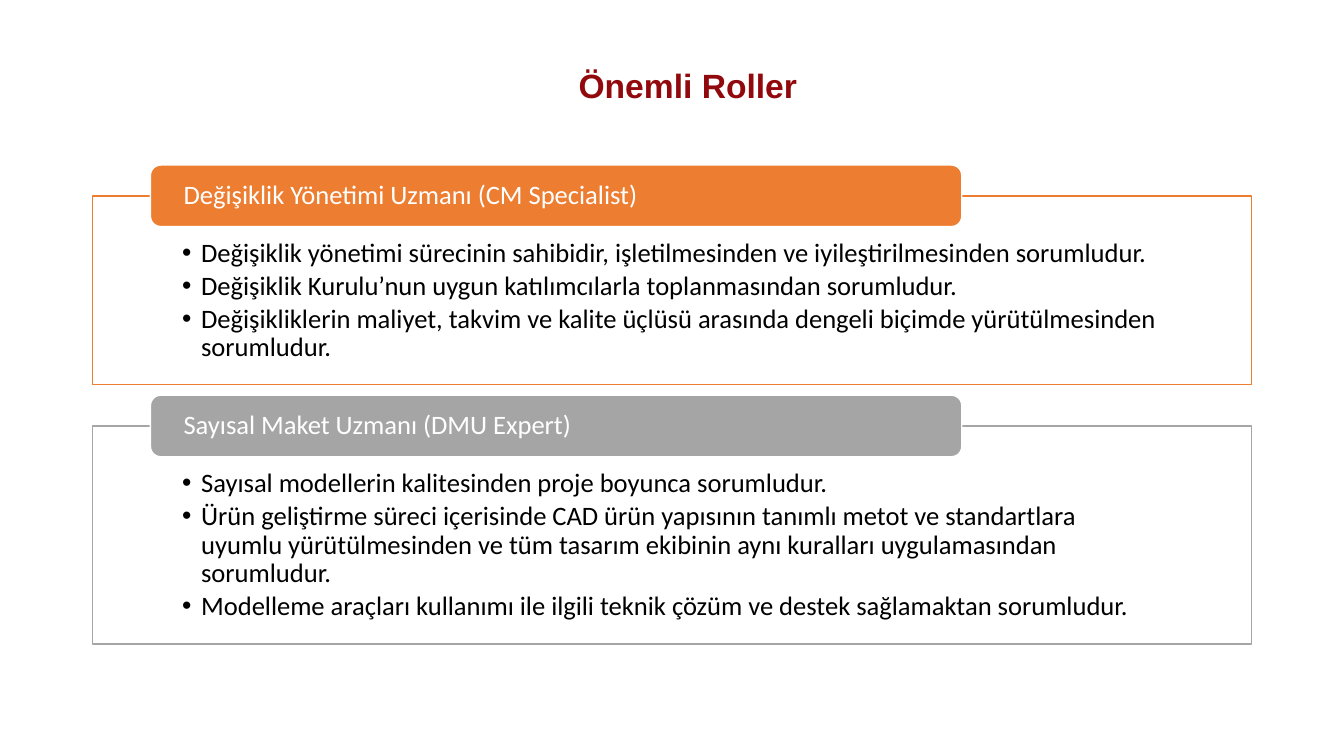
from pptx import Presentation
from pptx.dml.color import RGBColor
from pptx.enum.shapes import MSO_SHAPE as Kind
from pptx.enum.text import MSO_ANCHOR as Anchor, PP_ALIGN as Align
from pptx.oxml.ns import qn
from pptx.util import Cm, Pt
from lxml.etree import SubElement as Sub

ROLES = [
    ("Değişiklik Yönetimi Uzmanı (CM Specialist)", "ED7D31", 4.75, [
        "Değişiklik yönetimi sürecinin sahibidir, işletilmesinden ve iyileştirilmesinden sorumludur.",
        "Değişiklik Kurulu’nun uygun katılımcılarla toplanmasından sorumludur.",
        "Değişikliklerin maliyet, takvim ve kalite üçlüsü arasında dengeli biçimde yürütülmesinden sorumludur.",
    ]),
    ("Sayısal Maket Uzmanı (DMU Expert)", "A5A5A5", 5.49, [
        "Sayısal modellerin kalitesinden proje boyunca sorumludur.",
        "Ürün geliştirme süreci içerisinde CAD ürün yapısının tanımlı metot ve standartlara "
        "uyumlu yürütülmesinden ve tüm tasarım ekibinin aynı kuralları uygulamasından sorumludur.",
        "Modelleme araçları kullanımı ile ilgili teknik çözüm ve destek sağlamaktan sorumludur.",
    ]),
]
LEFT, TOP, WIDTH, GAP = 2.33, 4.94, 29.21, 1.05


def color(code):
    return RGBColor.from_string(code)


def add_bullet(para, indent=0.48):
    props = para._p.get_or_add_pPr()
    props.set("marL", str(Cm(indent)))
    props.set("indent", str(-Cm(indent)))
    Sub(props, qn("a:buFont")).set("typeface", "Arial")
    Sub(props, qn("a:buChar")).set("char", "•")


def write(shape, *lines, font="Calibri", size=19, ink="000000", bold=False,
          align=Align.LEFT, anchor=Anchor.MIDDLE, pad=(0, 0, 0, 0),
          bullet=False, gap=0):
    """Fill a shape with paragraphs; pad is left, top, right, bottom in cm."""
    frame = shape.text_frame
    frame.word_wrap = True
    frame.vertical_anchor = anchor
    (frame.margin_left, frame.margin_top,
     frame.margin_right, frame.margin_bottom) = map(Cm, pad)
    for i, line in enumerate(lines):
        para = frame.add_paragraph() if i else frame.paragraphs[0]
        if bullet:
            add_bullet(para)
        para.alignment = align
        para.line_spacing = 0.9
        if i:
            para.space_before = Pt(gap)
        run = para.add_run()
        run.text = line
        run.font.name, run.font.size, run.font.bold = font, Pt(size), bold
        run.font.color.rgb = color(ink)


def add_box(slide, kind, box, fill, edge, alpha=None):
    shape = slide.shapes.add_shape(kind, *map(Cm, box))
    shape.shadow.inherit = False
    shape.fill.solid()
    shape.fill.fore_color.rgb = color(fill)
    if alpha is not None:
        tint = shape.fill._xPr.find(qn("a:solidFill"))[0]
        Sub(tint, qn("a:alpha")).set("val", str(alpha * 1000))
    shape.line.color.rgb = color(edge)
    shape.line.width = Pt(1)
    return shape


def add_title(slide, text, box):
    title = slide.shapes.add_textbox(*map(Cm, box))
    write(title, text, font="Arial", size=24, ink="91090C", bold=True,
          align=Align.CENTER)


def add_role(slide, name, hue, duties, box):
    """Outlined panel of duties with a colored tab across its top edge."""
    left, top, width, _ = box
    panel = add_box(slide, Kind.RECTANGLE, box, "FFFFFF", hue, alpha=90)
    write(panel, *duties, anchor=Anchor.TOP, pad=(2.26, 1.09, 2.26, 0.38),
          bullet=True, gap=3)
    tab_box = (left + 0.05 * width, top - 0.78, 0.7 * width, 1.55)
    tab = add_box(slide, Kind.ROUNDED_RECTANGLE, tab_box, hue, "FFFFFF")
    write(tab, name, ink="FFFFFF", pad=(0.76, 0, 0.76, 0))


def main():
    deck = Presentation()
    deck.slide_width, deck.slide_height = Cm(33.87), Cm(19.05)
    slide = deck.slides.add_slide(deck.slide_layouts[6])
    add_title(slide, "Önemli Roller", (5.23, 1.62, 24.21, 1.19))
    top = TOP
    for name, hue, height, duties in ROLES:
        add_role(slide, name, hue, duties, (LEFT, top, WIDTH, height))
        top += height + GAP
    deck.save("out.pptx")


if __name__ == "__main__":
    main()
